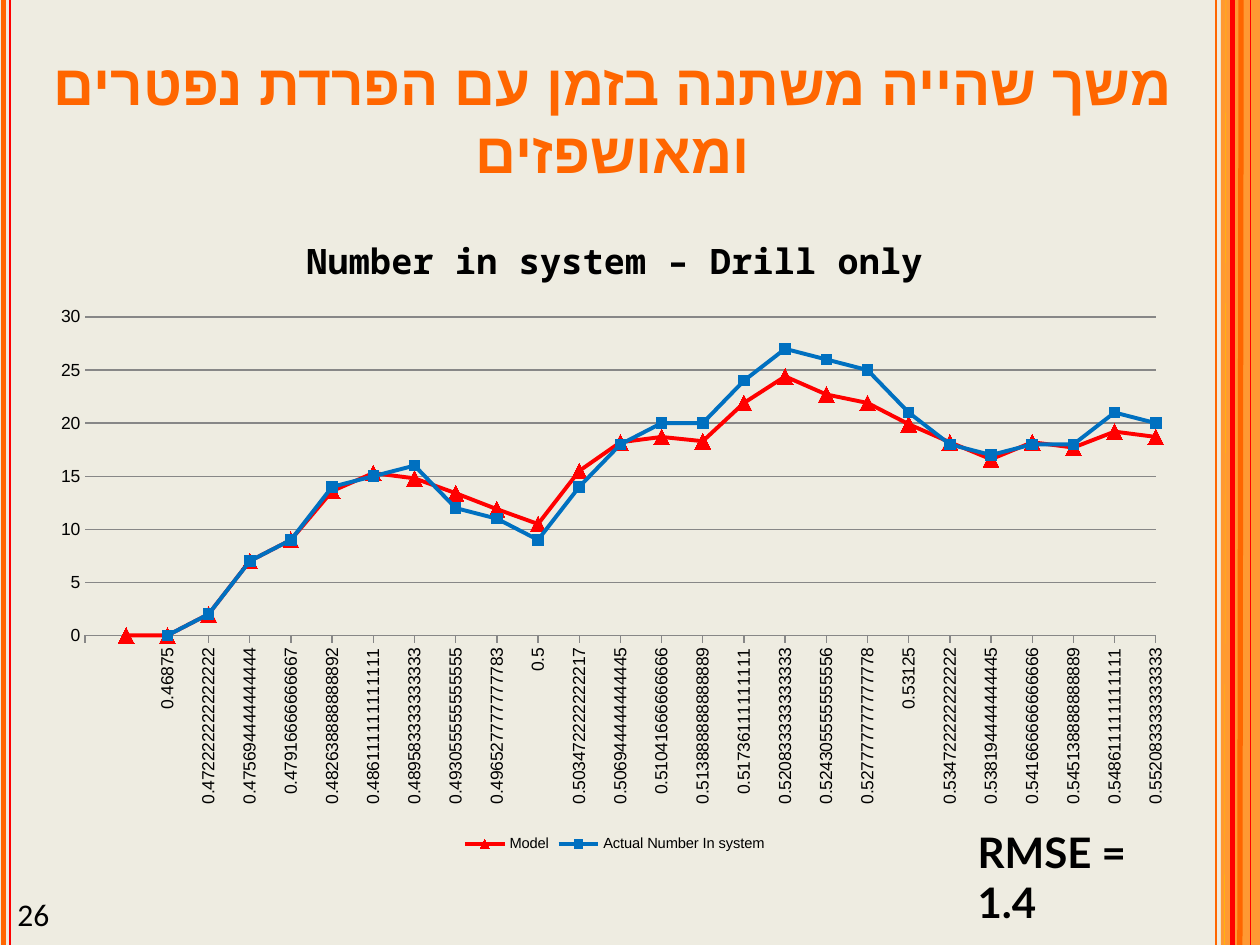
from dataclasses import dataclass

from lxml import etree
from pptx import Presentation
from pptx import util as u
from pptx.chart.data import CategoryChartData
from pptx.dml.color import RGBColor
from pptx.enum import chart as charts, shapes, text
from pptx.oxml import parse_xml
from pptx.oxml.ns import nsdecls, qn

Pt = u.Pt


@dataclass(frozen=True)
class Theme:
    """Colours, fonts and type sizes of the slide."""
    paper: str = "EEECE1"
    ink: str = "000000"
    orange: str = "FF6600"
    light_orange: str = "FF9933"
    amber: str = "FFC000"
    red: str = "FF0000"
    blue: str = "0070C0"
    grid: str = "878787"
    sans: str = "Arial"
    title: float = 32.4
    chart_title: float = 20
    axis: float = 10
    legend: float = 8.4
    number: float = 18
    note: float = 24


T = Theme()
CATEGORIES = ["", ""] + """
0.46875 0.472222222222222 0.475694444444444 0.47916666666667 0.482638888888892
0.486111111111111 0.489583333333333 0.493055555555555 0.496527777777783 0.5
0.503472222222217 0.506944444444445 0.51041666666666 0.513888888888889
0.51736111111111 0.520833333333333 0.524305555555556 0.527777777777778 0.53125
0.534722222222222 0.538194444444445 0.541666666666666 0.545138888888889
0.548611111111111 0.552083333333333""".split()
MODEL = [None, 0, 0, 2, 7, 9, 13.6, 15.3, 14.8, 13.4, 11.9, 10.5, 15.5, 18.2,
         18.7, 18.3, 21.9, 24.4, 22.7, 21.9, 19.9, 18.2, 16.6, 18.2, 17.7, 19.2, 18.7]
ACTUAL = [None, None, 0, 2, 7, 9, 14, 15, 16, 12, 11, 9, 14, 18,
          20, 20, 24, 27, 26, 25, 21, 18, 17, 18, 18, 21, 20]


def rgb(value):
    """Return a colour from its hex code."""
    return RGBColor.from_string(value)


def style(font, size, color=T.ink, name=T.sans, bold=False):
    """Set size, colour, face and weight of a font."""
    font.size, font.name, font.bold = Pt(size), name, bold
    font.color.rgb = rgb(color)


def add_text(s, box, words, size, color=T.ink, name=T.sans, bold=False,
             align=text.PP_ALIGN.LEFT, anchor=text.MSO_ANCHOR.TOP, rtl=False):
    """Place one wrapped paragraph in a box."""
    tf = s.shapes.add_textbox(*map(Pt, box)).text_frame
    tf.word_wrap, tf.vertical_anchor = True, anchor
    p = tf.paragraphs[0]
    p.alignment = align
    if rtl:
        p._p.get_or_add_pPr().set("rtl", "1")
    r = p.add_run()
    r.text = words
    style(r.font, size, color, name, bold)
    etree.SubElement(r._r.get_or_add_rPr(), qn("a:cs")).set("typeface", name)


def add_stripe(s, x, height, color, width, x_end=None):
    """Draw a vertical stripe down the slide."""
    end = x if x_end is None else x_end
    c = s.shapes.add_connector(shapes.MSO_CONNECTOR.STRAIGHT, Pt(x), 0, Pt(end), Pt(height))
    c.line.color.rgb, c.line.width = rgb(color), Pt(width)
    etree.SubElement(c._element.spPr, qn("a:effectLst"))


def add_borders(s, box):
    """Draw the striped bands at both edges of the box."""
    x, y, w, h = box
    band = 22.32
    sp = s.shapes.add_shape(shapes.MSO_SHAPE.RECTANGLE, *map(Pt, (x + w - band, y, band, h)))
    sp.shadow.inherit = False
    sp.fill.solid()
    sp.fill.fore_color.rgb = rgb(T.light_orange)
    sp.line.fill.background()
    add_stripe(s, x + 709.2, h, T.orange, 3, x + 708.5)
    for offset, color, width in ((704.2, T.red, 3), (694.8, T.orange, 1.5),
                                 (714.4, T.red, 0.25), (5.8, T.red, 1.5),
                                 (2.2, T.orange, 3)):
        add_stripe(s, x + offset, h, color, width)
    add_stripe(s, x + 700.5, h, T.amber, 0.25, x + 699.8)


def set_plot_layout(chart, x, y, w, h):
    """Fix the inner plot area as fractions of the chart."""
    plot_area = chart._chartSpace.chart.plotArea
    for old in plot_area.findall(qn("c:layout")):
        plot_area.remove(old)
    values = "".join(f'<c:{k} val="{v}"/>' for k, v in zip("xywh", (x, y, w, h)))
    plot_area.insert(0, parse_xml(
        f'<c:layout {nsdecls("c")}><c:manualLayout><c:layoutTarget val="inner"/>'
        f'<c:xMode val="edge"/><c:yMode val="edge"/>{values}</c:manualLayout></c:layout>'))


def style_axes(chart):
    """Format both axes and start the lines on the axis."""
    cat, val = chart.category_axis, chart.value_axis
    for axis in (cat, val):
        style(axis.tick_labels.font, T.axis)
        axis.format.line.color.rgb = rgb(T.grid)
    cat.major_tick_mark = charts.XL_TICK_MARK.OUTSIDE
    cat._element.find(f"{qn('c:txPr')}/{qn('a:bodyPr')}").set("rot", "-5400000")
    val.major_tick_mark = charts.XL_TICK_MARK.NONE
    val.format.line.fill.background()
    val.minimum_scale, val.maximum_scale, val.major_unit = 0, 30, 5
    val.has_major_gridlines = True
    val.major_gridlines.format.line.color.rgb = rgb(T.grid)
    for old in val._element.findall(qn("c:crossBetween")):
        val._element.remove(old)
    val._element.find(qn("c:crosses")).addnext(
        parse_xml(f'<c:crossBetween {nsdecls("c")} val="midCat"/>'))


def add_line_chart(s, box):
    """Place the chart of modelled and actual numbers in the system."""
    data = CategoryChartData()
    data.categories = CATEGORIES
    data.add_series("Model", MODEL)
    data.add_series("Actual Number In system", ACTUAL)
    chart = s.shapes.add_chart(charts.XL_CHART_TYPE.LINE_MARKERS, *map(Pt, box), data).chart
    style(chart.font, T.axis)
    chart.has_title = True
    r = chart.chart_title.text_frame.paragraphs[0].add_run()
    r.text = "Number in system – Drill only"
    style(r.font, T.chart_title, name="Noto Sans Mono", bold=True)
    chart.has_legend = True
    chart.legend.position = charts.XL_LEGEND_POSITION.BOTTOM
    chart.legend.include_in_layout = False
    style(chart.legend.font, T.legend)
    style_axes(chart)
    set_plot_layout(chart, 0.04, 0.17, 0.93, 0.49)
    plot = chart.plots[0]
    plot.vary_by_categories = False
    looks = ((T.red, charts.XL_MARKER_STYLE.TRIANGLE, 9),
             (T.blue, charts.XL_MARKER_STYLE.SQUARE, 6))
    for series, (color, marker, size) in zip(plot.series, looks):
        series.smooth = False
        series.format.line.color.rgb, series.format.line.width = rgb(color), Pt(2.25)
        series.marker.style, series.marker.size = marker, size
        series.marker.format.fill.solid()
        series.marker.format.fill.fore_color.rgb = rgb(color)
        series.marker.format.line.color.rgb = rgb(color)


def build_slide(prs, box):
    """Add the chart slide inside the given box."""
    s = prs.slides.add_slide(prs.slide_layouts[6])
    s.background.fill.solid()
    s.background.fill.fore_color.rgb = rgb(T.paper)
    middle = text.MSO_ANCHOR.MIDDLE
    add_borders(s, box)
    add_text(s, (16.5, 21.6, 667.5, 90), "משך שהייה משתנה בזמן עם הפרדת נפטרים ומאושפזים",
             T.title, T.orange, bold=True, align=text.PP_ALIGN.CENTER, anchor=middle, rtl=True)
    add_text(s, (2.9, 507.6, 167.8, 28.8), "26", T.number, name="Calibri",
             anchor=middle, rtl=True)
    add_line_chart(s, (22.3, 118, 658, 371.5))
    add_text(s, (551.5, 468.7, 118.8, 36), "RMSE = 1.4", T.note, name="Lato", bold=True)


def main():
    """Build and save the presentation."""
    prs = Presentation()
    prs.slide_width, prs.slide_height = Pt(720), Pt(540)
    build_slide(prs, (0, 0, 720, 540))
    prs.save("out.pptx")


if __name__ == "__main__":
    main()
